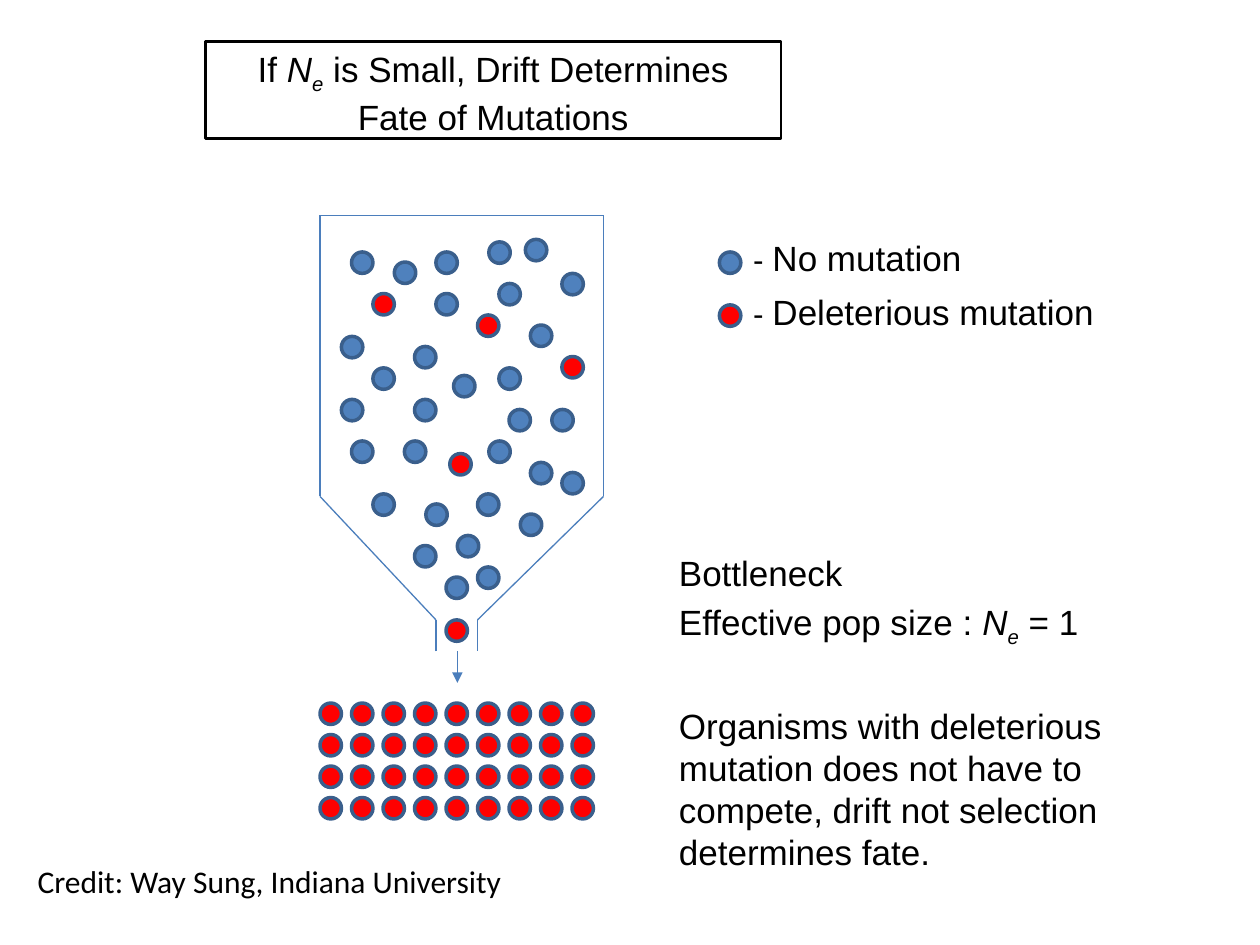
"""Build a slide on genetic drift through a population bottleneck."""
from lxml.etree import SubElement
from pptx import Presentation
from pptx.dml.color import RGBColor
from pptx.enum.shapes import MSO_CONNECTOR as CONNECTOR, MSO_SHAPE as SHAPE
from pptx.enum.text import MSO_ANCHOR as ANCHOR, MSO_AUTO_SIZE as AUTO_SIZE, PP_ALIGN as ALIGN
from pptx.oxml.ns import qn
from pptx.util import Inches, Pt


def rgb(value):
    return RGBColor.from_string(value)


def write(paragraph, pieces, font="Arial"):
    for text, size, style in pieces:
        run = paragraph.add_run()
        run.text = text
        run.font.name = font
        run.font.size = Pt(size)
        run.font.color.rgb = rgb("000000")
        if style:
            run.font.italic = True
        if style == "subscript":
            run._r.get_or_add_rPr().set("baseline", "-25000")


BLUE, RED, DOT_LINE, FUNNEL_LINE = "4F81BD", "FF0000", "3A5F8C", "4B7EBC"
DOT_SIZE = 0.17
NE = [("N", 20, "italic"), ("e", 20, "subscript")]

presentation = Presentation()
presentation.slide_width = Inches(10)
presentation.slide_height = Inches(7.5)
slide = presentation.slides.add_slide(presentation.slide_layouts[6])
shapes = slide.shapes

unmutated = [
    (2.79, 2), (3.13, 2.08), (3.46, 2), (3.88, 1.92), (4.17, 1.9), (4.46, 2.17),
    (3.96, 2.25), (3.46, 2.33), (4.21, 2.58), (2.71, 2.67), (3.29, 2.75),
    (2.96, 2.92), (3.6, 2.98), (3.96, 2.92), (2.71, 3.17), (3.29, 3.17),
    (4.04, 3.25), (4.38, 3.25), (2.79, 3.5), (3.21, 3.5), (3.88, 3.5),
    (4.21, 3.67), (4.46, 3.75), (2.96, 3.92), (3.38, 4), (3.79, 3.92),
    (4.13, 4.08), (3.63, 4.25), (3.29, 4.33), (3.79, 4.5), (3.54, 4.58),
]
deleterious = [(2.96, 2.33), (3.79, 2.5), (4.46, 2.83), (3.57, 3.6), (3.54, 4.92)]
survivors = [(2.54 + 0.25 * column, 5.58 + 0.25 * row) for row in range(4) for column in range(9)]
legend_dots = {BLUE: (5.71, 2), RED: (5.71, 2.42)}

dots = [(BLUE, unmutated), (RED, deleterious + survivors)]
for color, positions in dots:
    for left, top in positions + [legend_dots[color]]:
        dot = shapes.add_shape(SHAPE.OVAL, Inches(left), Inches(top), Inches(DOT_SIZE), Inches(DOT_SIZE))
        dot.shadow.inherit = False
        dot.fill.solid()
        dot.fill.fore_color.rgb = rgb(color)
        dot.line.color.rgb = rgb(DOT_LINE)
        dot.line.width = Pt(2)

funnel = [(3.46, 5.17), (3.46, 4.92), (2.54, 3.94), (2.54, 1.71),
          (4.79, 1.71), (4.79, 3.94), (3.79, 4.92), (3.79, 5.17)]
outflow = ((3.63, 5.17), (3.63, 5.42))
for start, end in [*zip(funnel, funnel[1:]), outflow]:
    line = shapes.add_connector(CONNECTOR.STRAIGHT, *map(Inches, start + end))
    line.line.color.rgb = rgb(FUNNEL_LINE)
    line.line.width = Pt(0.75)
    SubElement(line._element.spPr, qn("a:effectLst"))
    if (start, end) == outflow:
        SubElement(line.line._get_or_add_ln(), qn("a:tailEnd"), type="triangle")

labels = [
    (5.88, 1.83, 1.87, 0.44, "Arial", [("- ", 18, ""), ("No mutation", 20, "")]),
    (5.88, 2.26, 2.93, 0.44, "Arial", [("- ", 18, ""), ("Deleterious mutation", 20, "")]),
    (0.2, 6.79, 3.94, 0.4, "Calibri", [("Credit: Way Sung, Indiana University", 18, "")]),
]
for left, top, width, height, font, pieces in labels:
    label = shapes.add_textbox(Inches(left), Inches(top), Inches(width), Inches(height))
    label.text_frame.word_wrap = False
    label.text_frame.auto_size = AUTO_SIZE.SHAPE_TO_FIT_TEXT
    write(label.text_frame.paragraphs[0], pieces, font)

explanation = shapes.add_textbox(Inches(5.29), Inches(4.33), Inches(3.67), Inches(1))
explanation.text_frame.word_wrap = True
statements = [
    (0, [("Bottleneck", 20, "")]),
    (4, [("Effective pop size : ", 20, ""), *NE, (" = 1", 20, "")]),
    (32, [("Organisms with deleterious mutation does not have to compete, "
           "drift not selection determines fate.", 20, "")]),
]
for index, (space, pieces) in enumerate(statements):
    frame = explanation.text_frame
    paragraph = frame.add_paragraph() if index else frame.paragraphs[0]
    paragraph.space_before = Pt(space)
    write(paragraph, pieces)

title = shapes.add_shape(SHAPE.RECTANGLE, Inches(1.63), Inches(0.33), Inches(4.57), Inches(0.77))
title.shadow.inherit = False
title.fill.background()
title.line.color.rgb = rgb("000000")
title.line.width = Pt(1.5)
title.text_frame.word_wrap = True
title.text_frame.vertical_anchor = ANCHOR.TOP
title.text_frame.paragraphs[0].alignment = ALIGN.CENTER
write(title.text_frame.paragraphs[0],
      [("If ", 20, ""), *NE, (" is Small, Drift Determines Fate of Mutations", 20, "")])

presentation.save("out.pptx")
